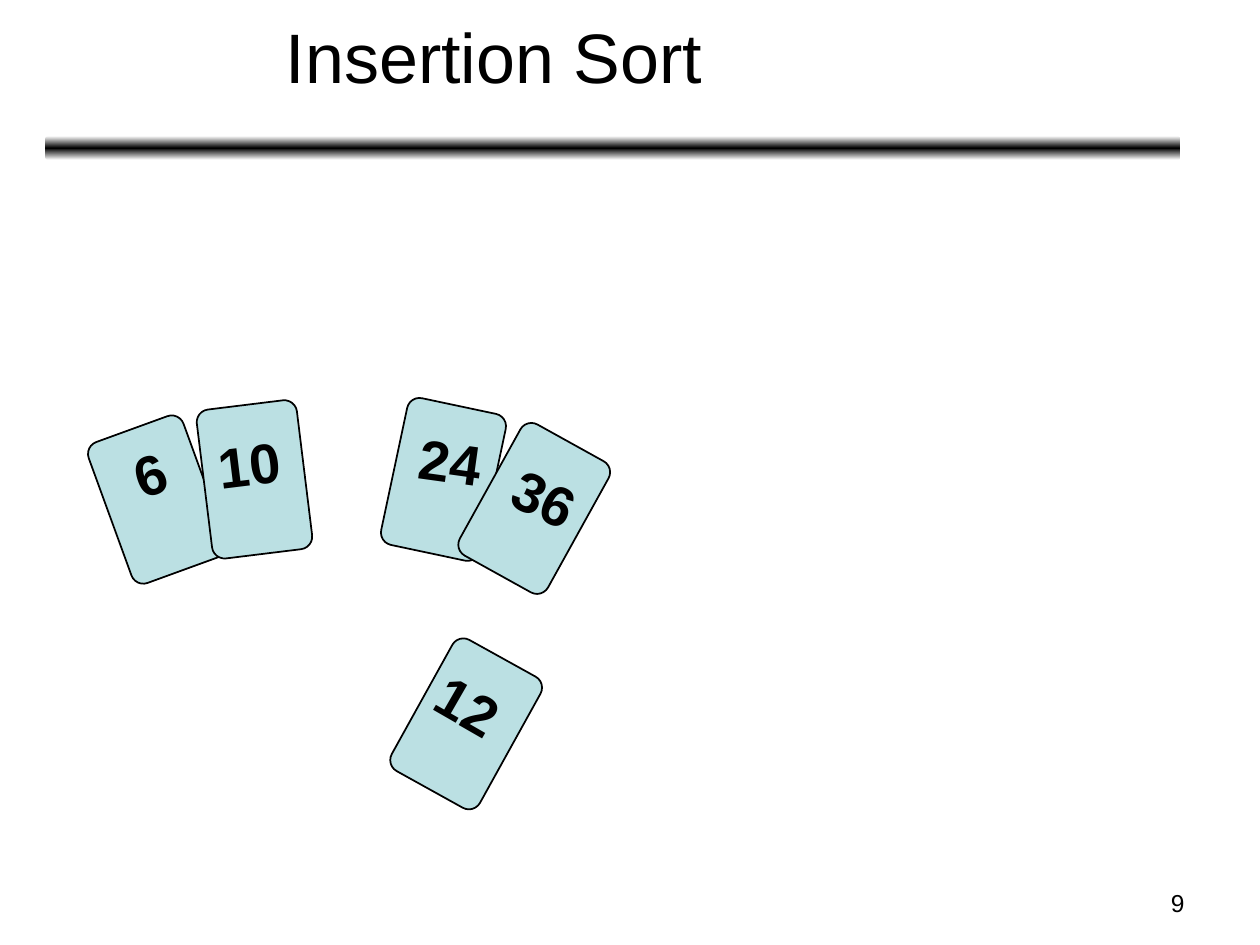
from dataclasses import dataclass

from lxml.etree import SubElement
from pptx import Presentation
from pptx.dml.color import RGBColor
from pptx.enum.shapes import MSO_SHAPE as Shape
from pptx.enum.text import MSO_ANCHOR as Anchor, MSO_AUTO_SIZE as Fit, PP_ALIGN as Align
from pptx.oxml.ns import qn
from pptx.util import Inches, Pt

COLS, ROWS = 100, 75
INK, PAPER, TEAL = "000000", "FFFFFF", "BBE0E3"
CARD_W, CARD_H = 8, 11.9
TAG_H = 6.3

deck = Presentation()
deck.slide_width, deck.slide_height = Inches(10), Inches(7.5)
slide = deck.slides.add_slide(deck.slide_layouts[6])


@dataclass
class Box:
    col: float
    row: float
    wide: float
    high: float
    turn: float = 0

    def span(self) -> tuple:
        x, y = deck.slide_width / COLS, deck.slide_height / ROWS
        return int(self.col * x), int(self.row * y), int(self.wide * x), int(self.high * y)


@dataclass
class Card:
    text: str
    face: Box
    tag: Box


def card(text: str, face: tuple, tag: tuple) -> Card:
    col, row, turn = face
    left, top, wide, tilt = tag
    return Card(text, Box(col, row, CARD_W, CARD_H, turn), Box(left, top, wide, TAG_H, tilt))


def tint(code: str) -> RGBColor:
    return RGBColor.from_string(code)


def add_round(box: Box, bend: float):
    shape = slide.shapes.add_shape(Shape.ROUNDED_RECTANGLE, *box.span())
    shape.adjustments[0] = bend
    shape.rotation = box.turn
    shape.shadow.inherit = False
    return shape


def add_rule(box: Box) -> None:
    rule = add_round(box, 0.167)
    rule.line.fill.background()
    rule.fill.gradient()
    rule.fill.gradient_angle = 270
    stops = rule._element.spPr.find(qn("a:gradFill")).find(qn("a:gsLst"))
    for stop in list(stops):
        stops.remove(stop)
    for share, code in ((0, PAPER), (50, INK), (100, PAPER)):
        stop = SubElement(stops, qn("a:gs"), pos=str(share * 1000))
        SubElement(stop, qn("a:srgbClr"), val=code)


def add_face(box: Box) -> None:
    face = add_round(box, 0.125)
    face.fill.solid()
    face.fill.fore_color.rgb = tint(TEAL)
    face.line.color.rgb = tint(INK)
    face.line.width = Pt(1)


def add_text(text: str, box: Box, size: int, align=Align.LEFT, bold=False, wrap=True, anchor=Anchor.TOP) -> None:
    label = slide.shapes.add_textbox(*box.span())
    label.rotation = box.turn
    frame = label.text_frame
    frame.text = text
    frame.word_wrap = wrap
    frame.auto_size = Fit.NONE if wrap else Fit.SHAPE_TO_FIT_TEXT
    frame.vertical_anchor = anchor
    line = frame.paragraphs[0]
    line.alignment = align
    font = line.runs[0].font
    font.name, font.size, font.bold = "Arial", Pt(size), bold
    font.color.rgb = tint(INK)


CARDS = [
    card("6", (8.5, 33.7, 340), (9.7, 34.4, 4.5, 341)),
    card("10", (16.2, 32.1, 353), (16.3, 33.6, 7, 353)),
    card("24", (31.2, 32.1, 12), (32.3, 33.4, 7, 8)),
    card("36", (38.4, 34.4, 29), (39.8, 36.3, 7, 25)),
    card("12", (33, 51.5, 29), (33.7, 52.8, 7, 30)),
]

add_rule(Box(3.6, 10.8, 90.1, 1.9))
add_text("9", Box(71.7, 70, 23.3, 3.5), 14, Align.RIGHT)
add_text("Insertion Sort", Box(3.7, 2.5, 71, 5.7), 40, Align.CENTER, anchor=Anchor.BOTTOM)
for item in CARDS:
    add_face(item.face)
for item in CARDS:
    add_text(item.text, item.tag, 32, bold=True, wrap=False)

deck.save("out.pptx")
